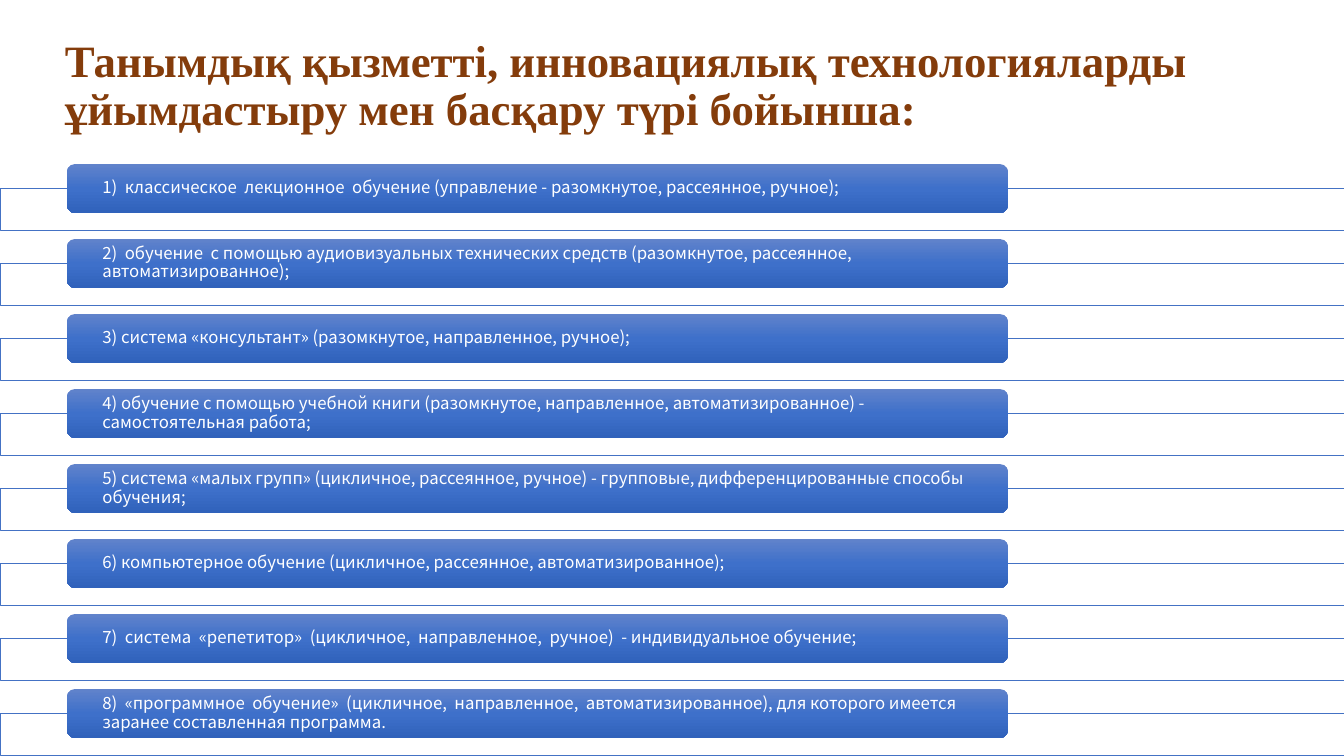
import copy

import pptx
import pptx.dml.color
import pptx.enum.shapes
import pptx.enum.text
import pptx.oxml
import pptx.oxml.ns
import pptx.util

# Content
HEADING = "Танымдық қызметті, инновациялық технологияларды ұйымдастыру мен басқару түрі бойынша:"
TEACHING_FORMS = [
    "1)  классическое  лекционное  обучение (управление - разомкнутое, рассеянное, ручное);",
    "2)  обучение  с помощью аудиовизуальных технических средств (разомкнутое, рассеянное, автоматизированное);",
    "3) система «консультант» (разомкнутое, направленное, ручное);",
    "4) обучение с помощью учебной книги (разомкнутое, направленное, автоматизированное) - самостоятельная работа;",
    "5) система «малых групп» (цикличное, рассеянное, ручное) - групповые, дифференцированные способы обучения;",
    "6) компьютерное обучение (цикличное, рассеянное, автоматизированное);",
    "7)  система  «репетитор»  (цикличное,  направленное,  ручное)  - индивидуальное обучение;",
    "8)  «программное  обучение»  (цикличное,  направленное,  автоматизированное), для которого имеется "
    "заранее составленная программа.",
]
BAR_GRADIENT = [(0, "6183CB"), (0.5, "3E70CA"), (1, "3062BB")]

# Layout in px
SLIDE_W, SLIDE_H = 1344, 756
HEADING_BOX = (55, 14, 1206, 146)
FIRST_BAR_Y, PITCH = 164, 75
BAR_X, BAR_W, BAR_H = 67, 941, 49
BAND_OFFSET, BAND_H = 24, 42
BAR_INSET = 33


def px(length):
    return pptx.util.Emu(round(length * 12192000 / SLIDE_W))


def color(hex_string):
    return pptx.dml.color.RGBColor.from_string(hex_string)


def write(frame, text, font, size, hex_string, bold=False):
    frame.word_wrap = True
    frame.vertical_anchor = pptx.enum.text.MSO_ANCHOR.MIDDLE
    paragraph = frame.paragraphs[0]
    paragraph.text = text
    paragraph.alignment = pptx.enum.text.PP_ALIGN.LEFT
    paragraph.line_spacing = 0.9
    paragraph.font.name = font
    paragraph.font.size = pptx.util.Pt(size)
    paragraph.font.bold = bold
    paragraph.font.color.rgb = color(hex_string)


def add_band(slide, y):
    band = slide.shapes.add_shape(pptx.enum.shapes.MSO_SHAPE.RECTANGLE, 0, px(y), px(SLIDE_W), px(BAND_H))
    band.shadow.inherit = False
    band.fill.solid()
    band.fill.fore_color.rgb = color("FFFFFF")
    white = band._element.spPr.find(".//" + pptx.oxml.ns.qn("a:srgbClr"))
    white.append(pptx.oxml.parse_xml(f'<a:alpha {pptx.oxml.ns.nsdecls("a")} val="90000"/>'))
    band.line.color.rgb = color("4472C4")
    band.line.width = pptx.util.Pt(0.5)


def add_bar(slide, y, text):
    bar = slide.shapes.add_shape(
        pptx.enum.shapes.MSO_SHAPE.ROUNDED_RECTANGLE, px(BAR_X), px(y), px(BAR_W), px(BAR_H))
    bar.shadow.inherit = False
    bar.line.fill.background()
    # The default gradient has two stops, so a third is added
    bar.fill.gradient()
    bar.fill.gradient_angle = 270
    stop_list = bar._element.spPr.find(".//" + pptx.oxml.ns.qn("a:gsLst"))
    stop_list.append(copy.deepcopy(stop_list[0]))
    for stop, (position, hex_string) in zip(bar.fill.gradient_stops, BAR_GRADIENT):
        stop.position = position
        stop.color.rgb = color(hex_string)
    frame = bar.text_frame
    frame.margin_left = frame.margin_right = px(BAR_INSET)
    frame.margin_top = frame.margin_bottom = 0
    write(frame, text, "Noto Sans CJK SC", 12, "FFFFFF")


def main():
    deck = pptx.Presentation()
    deck.slide_width, deck.slide_height = px(SLIDE_W), px(SLIDE_H)
    slide = deck.slides.add_slide(deck.slide_layouts[6])

    # List of teaching forms
    for index, form in enumerate(TEACHING_FORMS):
        y = FIRST_BAR_Y + index * PITCH
        add_band(slide, y + BAND_OFFSET)
        add_bar(slide, y, form)

    # Heading
    heading = slide.shapes.add_textbox(*map(px, HEADING_BOX))
    write(heading.text_frame, HEADING, "Times New Roman", 32, "843C0B", bold=True)

    deck.save("out.pptx")


if __name__ == "__main__":
    main()
